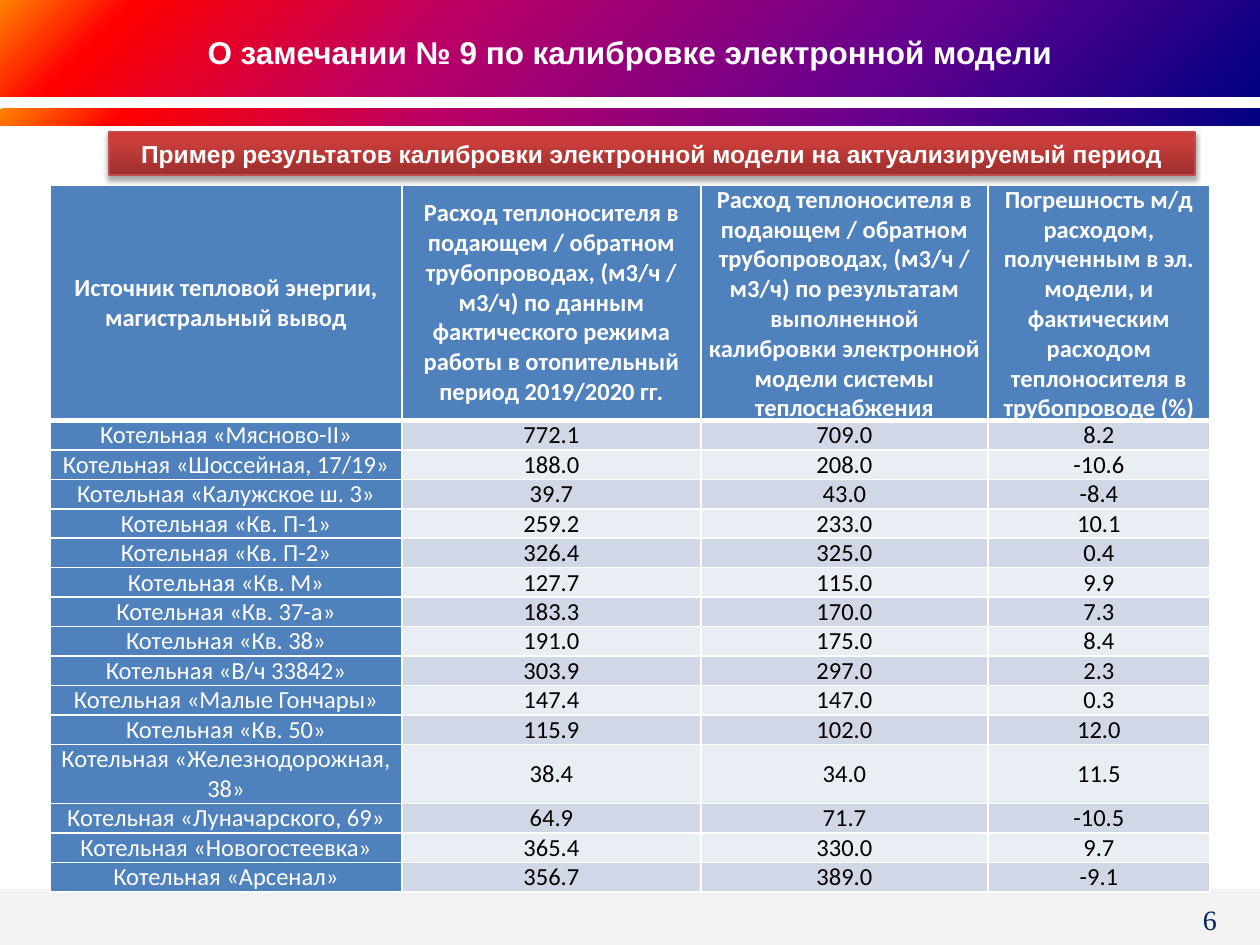
from dataclasses import dataclass

from lxml import etree
from pptx import Presentation
from pptx.dml.color import RGBColor
from pptx.enum.shapes import MSO_SHAPE
from pptx.enum.text import MSO_ANCHOR, PP_ALIGN
from pptx.oxml.ns import qn
from pptx.util import Pt

RECT = MSO_SHAPE.RECTANGLE
MIDDLE = MSO_ANCHOR.MIDDLE
CENTER = PP_ALIGN.CENTER
RIGHT = PP_ALIGN.RIGHT
SCALE = 914400 / 126


@dataclass(frozen=True)
class Theme:
    white: str = "FFFFFF"
    black: str = "000000"
    navy: str = "002060"
    foot: str = "F2F2F2"
    head: str = "4F81BD"
    bands: tuple = ("D0D8E8", "E9EDF4")
    edge: str = "BF4C48"
    rainbow: tuple = ((0, "000082"), (30, "66008F"), (65, "BA0066"),
                      (90, "FF0000"), (100, "FF8200"))
    red: tuple = ((0, "9C2F2D"), (80, "CB3E3A"), (100, "CE3B37"))
    sans: str = "Arial"
    body: str = "Calibri"
    serif: str = "Times New Roman"
    title: int = 18
    page: int = 16
    text: int = 14


T = Theme()

HEADS = (
    "Источник тепловой энергии, магистральный вывод",
    "Расход теплоносителя в подающем / обратном трубопроводах, (м3/ч / м3/ч) "
    "по данным фактического режима работы в отопительный период 2019/2020 гг.",
    "Расход теплоносителя в подающем / обратном трубопроводах, (м3/ч / м3/ч) "
    "по результатам выполненной калибровки электронной модели системы теплоснабжения",
    "Погрешность м/д расходом, полученным в эл. модели, и фактическим расходом "
    "теплоносителя в трубопроводе (%)",
)
PLANTS = (
    ("Мясново-II", "772.1", "709.0", "8.2"),
    ("Шоссейная, 17/19", "188.0", "208.0", "-10.6"),
    ("Калужское ш. 3", "39.7", "43.0", "-8.4"),
    ("Кв. П-1", "259.2", "233.0", "10.1"),
    ("Кв. П-2", "326.4", "325.0", "0.4"),
    ("Кв. М", "127.7", "115.0", "9.9"),
    ("Кв. 37-а", "183.3", "170.0", "7.3"),
    ("Кв. 38", "191.0", "175.0", "8.4"),
    ("В/ч 33842", "303.9", "297.0", "2.3"),
    ("Малые Гончары", "147.4", "147.0", "0.3"),
    ("Кв. 50", "115.9", "102.0", "12.0"),
    ("Железнодорожная, 38", "38.4", "34.0", "11.5"),
    ("Луначарского, 69", "64.9", "71.7", "-10.5"),
    ("Новогостеевка", "365.4", "330.0", "9.7"),
    ("Арсенал", "356.7", "389.0", "-9.1"),
)
WIDTHS = (352, 299, 287, 222)


def px(n):
    return round(n * SCALE)


def node(parent, tag, **attrs):
    item = etree.SubElement(parent, qn("a:" + tag))
    for key, value in attrs.items():
        item.set(key, str(value))
    return item


def write(frame, text, font, size, color, bold=False, align=CENTER):
    frame.word_wrap = True
    frame.vertical_anchor = MIDDLE
    para = frame.paragraphs[0]
    para.alignment = align
    run = para.add_run()
    run.text = text
    run.font.name = font
    run.font.size = Pt(size)
    run.font.bold = bold
    run.font.color.rgb = RGBColor.from_string(color)


def block(slide, box):
    shape = slide.shapes.add_shape(RECT, *map(px, box))
    shape.shadow.inherit = False
    shape.line.fill.background()
    return shape


def blend(shape, stops):
    props = shape._element.spPr
    grad = node(props, "gradFill", rotWithShape=1)
    props.insert(2, grad)
    stop_list = node(grad, "gsLst")
    for pos, color in stops:
        node(node(stop_list, "gs", pos=pos * 1000), "srgbClr", val=color)
    return grad


def header(slide, box):
    left, top, width, height = box
    for y, tall in ((0, 97), (109, 17)):
        bar = block(slide, (left, top + y, width, tall))
        way = node(blend(bar, T.rainbow), "path", path="circle")
        node(way, "fillToRect", l=100000, t=100000, r=0, b=0)
    label = slide.shapes.add_textbox(*map(px, (left, top - 1, width, height)))
    write(label.text_frame, "О замечании № 9 по калибровке электронной модели",
          T.sans, T.title, T.white, True)


def footer(slide, box):
    strip = block(slide, box)
    strip.fill.solid()
    strip.fill.fore_color.rgb = RGBColor.from_string(T.foot)
    strip.text_frame.margin_right = px(43)
    write(strip.text_frame, "6", T.serif, T.page, T.navy, align=RIGHT)


def banner(slide, box):
    plate = block(slide, box)
    node(blend(plate, T.red), "lin", ang=270 * 60000, scaled=0)
    plate.line.color.rgb = RGBColor.from_string(T.edge)
    plate.line.width = Pt(0.75)
    effects = plate._element.spPr.find(qn("a:effectLst"))
    shade = node(effects, "outerShdw", blurRad=Pt(3.1), dist=Pt(1.8),
                 dir=90 * 60000, rotWithShape=0)
    node(node(shade, "srgbClr", val=T.black), "alpha", val=35000)
    write(plate.text_frame,
          "Пример результатов калибровки электронной модели на актуализируемый период",
          T.sans, T.text, T.white, True)


def border(cell, top, base):
    props = cell._tc.get_or_add_tcPr()
    for i, (side, width) in enumerate((("L", 1), ("R", 1), ("T", top), ("B", base))):
        line = node(props, "ln" + side, w=Pt(width))
        node(node(line, "solidFill"), "srgbClr", val=T.white)
        props.insert(i, line)


def table(slide, box):
    rows = [HEADS] + [(f"Котельная «{name}»", *data) for name, *data in PLANTS]
    grid = slide.shapes.add_table(len(rows), len(WIDTHS), *map(px, box)).table
    for col, width in zip(grid.columns, WIDTHS):
        col.width = px(width)
    for r, row in enumerate(rows):
        grid.rows[r].height = px(28 if r else 217)
        for c, text in enumerate(row):
            cell = grid.cell(r, c)
            title = r == 0 or c == 0
            cell.margin_left = cell.margin_right = px(6)
            cell.margin_top = cell.margin_bottom = 0
            cell.vertical_anchor = MIDDLE
            cell.fill.solid()
            color = T.head if title else T.bands[(r - 1) % 2]
            cell.fill.fore_color.rgb = RGBColor.from_string(color)
            border(cell, 3 if r == 1 else 1, 1 if r else 3)
            write(cell.text_frame, text, T.body, T.text,
                  T.white if title else T.black, r == 0)


def main():
    deck = Presentation()
    deck.slide_width, deck.slide_height = px(1260), px(945)
    slide = deck.slides.add_slide(deck.slide_layouts[6])
    header(slide, (0, 0, 1260, 106))
    footer(slide, (0, 889, 1260, 60))
    table(slide, (50, 185, sum(WIDTHS), 637))
    banner(slide, (109, 132, 1086, 43))
    deck.save("out.pptx")


if __name__ == "__main__":
    main()
